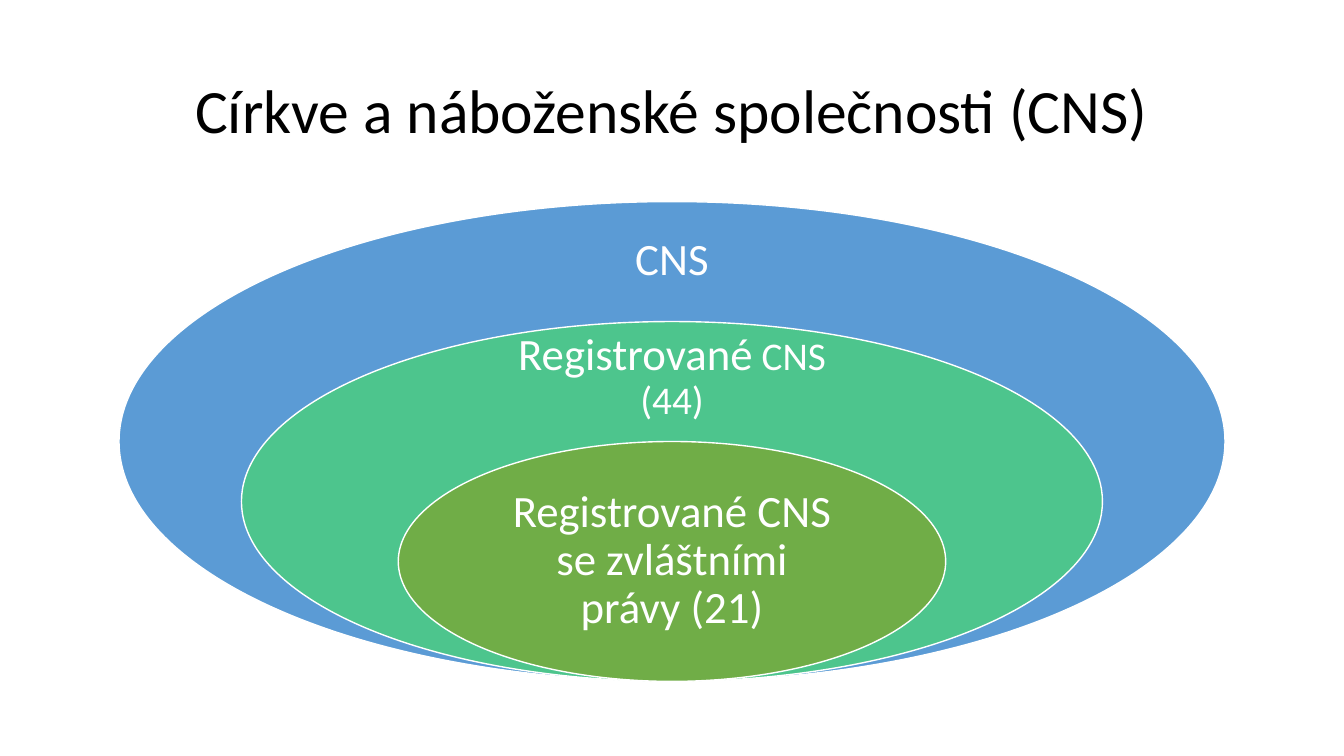
from dataclasses import dataclass

from pptx import Presentation
from pptx.dml.color import RGBColor
from pptx.enum.shapes import MSO_SHAPE
from pptx.enum.text import MSO_ANCHOR, PP_ALIGN
from pptx.util import Pt


@dataclass(frozen=True)
class Theme:
    font: str = "Calibri"
    black: str = "000000"
    white: str = "FFFFFF"
    blue: str = "5B9BD5"
    teal: str = "4DC58D"
    green: str = "70AD47"
    title_size: int = 44
    label_size: int = 32
    small_size: int = 28


THEME = Theme()
CENTER = 480
ELLIPSE_BOTTOM = 486.72
OUTER_HEIGHT = 342.72


def add_ellipse(slide, width, height, color):
    shape = slide.shapes.add_shape(
        MSO_SHAPE.OVAL,
        Pt(CENTER - width / 2), Pt(ELLIPSE_BOTTOM - height), Pt(width), Pt(height),
    )
    shape.shadow.inherit = False
    shape.fill.solid()
    shape.fill.fore_color.rgb = RGBColor.from_string(color)
    shape.line.color.rgb = RGBColor.from_string(THEME.white)
    shape.line.width = Pt(1)


def add_centered_text(slide, text, middle, width, height, size, color, inset):
    box = slide.shapes.add_textbox(
        Pt(CENTER - width / 2), Pt(middle - height / 2), Pt(width), Pt(height)
    )
    frame = box.text_frame
    frame.word_wrap = True
    frame.vertical_anchor = MSO_ANCHOR.MIDDLE
    frame.margin_left = frame.margin_right = Pt(inset)
    frame.margin_top = frame.margin_bottom = Pt(inset)
    paragraph = frame.paragraphs[0]
    paragraph.alignment = PP_ALIGN.CENTER
    paragraph.line_spacing = 0.9
    paragraph.font.name = THEME.font
    paragraph.font.size = Pt(size)
    paragraph.font.color.rgb = RGBColor.from_string(color)
    paragraph.add_run().text = text
    return paragraph


def add_label(slide, text, middle, width, height):
    return add_centered_text(
        slide, text, middle, width, height, THEME.label_size, THEME.white, 18
    )


def main():
    presentation = Presentation()
    presentation.slide_width = Pt(960)
    presentation.slide_height = Pt(540)
    slide = presentation.slides.add_slide(presentation.slide_layouts[6])

    add_centered_text(
        slide, "Církve a náboženské společnosti (CNS)",
        81, 828, 104.4, THEME.title_size, THEME.black, 5,
    )

    add_ellipse(slide, 790, OUTER_HEIGHT, THEME.blue)
    add_label(slide, "CNS", 186.1, 276.5, 51)

    add_ellipse(slide, 615, OUTER_HEIGHT * 0.75, THEME.teal)
    registered = add_label(slide, "Registrované", 269.64, 286.5, 48)
    count = registered.add_run()
    count.text = " CNS (44)"
    count.font.size = Pt(THEME.small_size)

    add_ellipse(slide, 391, OUTER_HEIGHT * 0.5, THEME.green)
    add_label(
        slide, "Registrované CNS se zvláštními právy (21)", 400.68, 276.5, 86
    )

    presentation.save("out.pptx")


if __name__ == "__main__":
    main()
